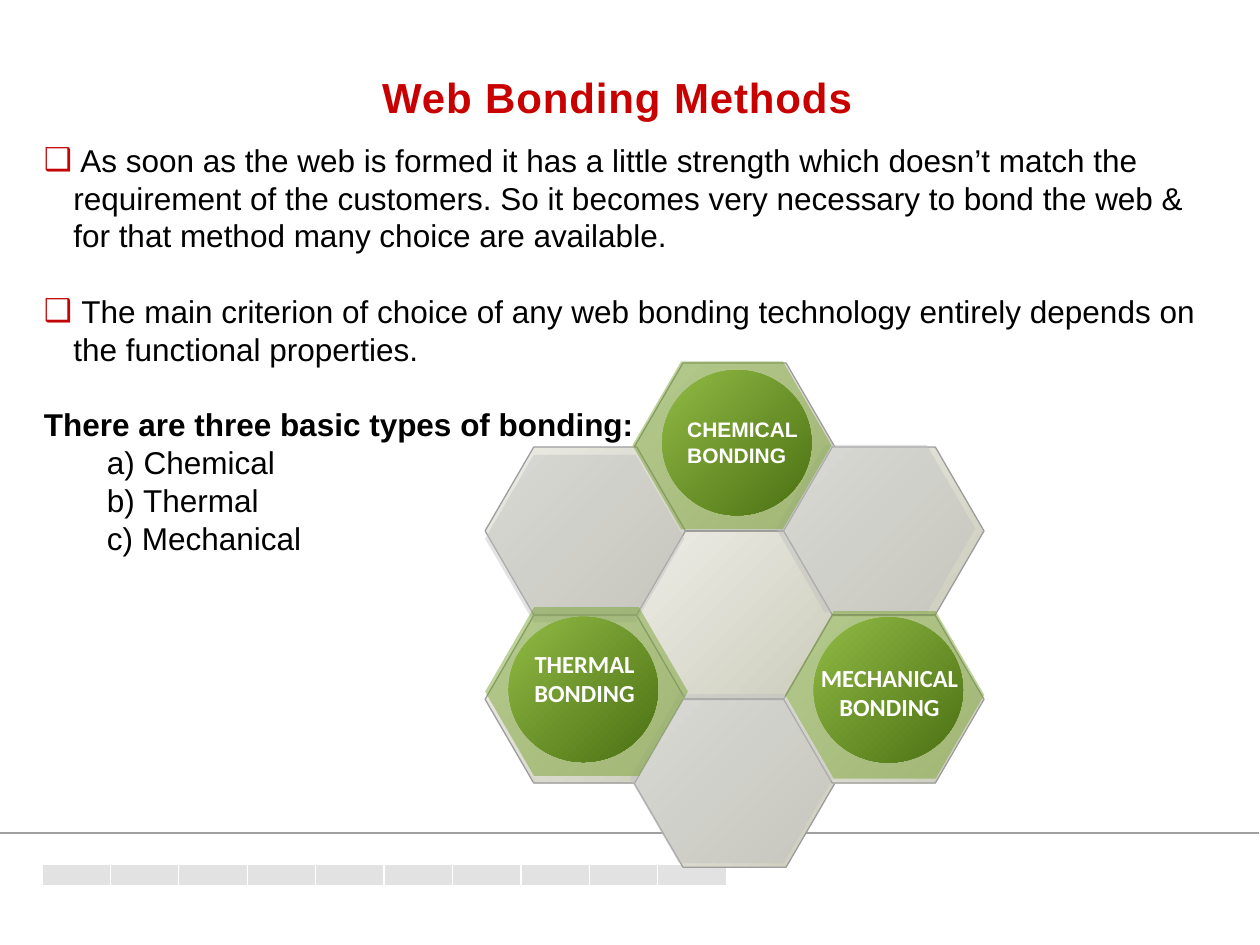
"""Build the web bonding methods slide with its honeycomb of bonding types."""
from dataclasses import dataclass
from typing import Optional

from lxml import etree
from pptx import Presentation
from pptx.dml.color import RGBColor
from pptx.enum.shapes import MSO_CONNECTOR, MSO_SHAPE
from pptx.enum.text import MSO_ANCHOR, PP_ALIGN
from pptx.oxml.ns import qn
from pptx.util import Pt

RECTANGLE, HEXAGON, OVAL = MSO_SHAPE.RECTANGLE, MSO_SHAPE.HEXAGON, MSO_SHAPE.OVAL
STRAIGHT = MSO_CONNECTOR.STRAIGHT
LEFT, CENTER = PP_ALIGN.LEFT, PP_ALIGN.CENTER
TOP, BOTTOM = MSO_ANCHOR.TOP, MSO_ANCHOR.BOTTOM

WHITE = RGBColor(0xFF, 0xFF, 0xFF)
BLACK = RGBColor(0x00, 0x00, 0x00)
TITLE_RED = RGBColor(0xC9, 0x00, 0x00)
BULLET_RED = RGBColor(0xC4, 0x05, 0x05)
BAR_GRAY = RGBColor(0xE2, 0xE2, 0xE2)
RULE_GRAY = RGBColor(0x9F, 0x9F, 0x9F)
CELL_EDGE = RGBColor(0x9D, 0x9D, 0x9D)
CELL_LIGHT = RGBColor(0xED, 0xED, 0xE7)
CELL_DARK = RGBColor(0xCC, 0xCC, 0xBC)
SILVER = RGBColor(0xC0, 0xC0, 0xC0)
GREEN = RGBColor(0x6B, 0x9B, 0x1A)
DISC_LIGHT = RGBColor(0x90, 0xBA, 0x45)
DISC_DARK = RGBColor(0x4C, 0x70, 0x13)


@dataclass(frozen=True)
class Area:
    left: float
    top: float
    width: float
    height: float

    def lengths(self) -> tuple:
        return tuple(Pt(n) for n in (self.left, self.top, self.width, self.height))


@dataclass(frozen=True)
class Style:
    font: str
    size: float
    color: RGBColor
    align: PP_ALIGN = LEFT
    anchor: MSO_ANCHOR = TOP
    inset: tuple = (7.2, 3.6)
    pitch: Optional[float] = None


@dataclass(frozen=True)
class Line:
    text: str
    bold: bool = True
    bullet: Optional[str] = None
    indent: float = 0
    before: float = 0
    tracking: int = 0


@dataclass(frozen=True)
class Overlay:
    area: Area
    color: RGBColor


@dataclass(frozen=True)
class Label:
    area: Area
    style: Style
    lines: tuple


TITLE_STYLE = Style("Arial", 24, TITLE_RED, CENTER, BOTTOM)
BODY_STYLE = Style("Arial", 18, BLACK, pitch=21.6)
CHEMICAL_STYLE = Style("Arial", 12, WHITE, pitch=14.8)
DISC_STYLE = Style("Calibri", 14, WHITE, CENTER, inset=(0, 0))

HANG = 16.8
BODY = (
    Line(" As soon as the web is formed it has a little strength which doesn’t match the "
         "requirement of the customers. So it becomes very necessary to bond the web & "
         "for that method many choice are available.", False, "❑", HANG),
    Line(" The main criterion of choice of any web bonding technology entirely depends on "
         "the functional properties.", False, "❑", HANG, BODY_STYLE.pitch),
    Line("There are three basic types of bonding:", before=BODY_STYLE.pitch),
    Line("a) Chemical", False, indent=36),
    Line("b) Thermal", False, indent=36),
    Line("c) Mechanical", False, indent=36),
)

CELLS = ((1, 0), (1, 2), (0, 1), (0, 3), (1, 4), (2, 1), (2, 3))
OVERLAYS = (
    Overlay(Area(277.2, 259.9, 113.8, 95.8), SILVER),
    Overlay(Area(360, 396.7, 115.9, 96.5), SILVER),
    Overlay(Area(443.5, 254.2, 113.8, 95.8), SILVER),
    Overlay(Area(277.2, 347, 115.9, 96.5), GREEN),
    Overlay(Area(361.4, 206.6, 113.8, 95.8), GREEN),
    Overlay(Area(448.6, 349.2, 113.8, 95.8), GREEN),
)
DISCS = ((378.4, 211.5), (465, 352.8), (290.7, 352.5))
LABELS = (
    Label(Area(463.7, 378.7, 89.3, 33.8), DISC_STYLE, (Line("MECHANICAL BONDING"),)),
    Label(Area(301.7, 370.8, 64.8, 31), DISC_STYLE, (Line("THERMAL BONDING"),)),
    Label(Area(385.6, 234, 100, 36), CHEMICAL_STYLE, (Line("CHEMICAL"), Line("BONDING"))),
)


def add_figure(page, kind: MSO_SHAPE, area: Area, colors: tuple,
               edge: Optional[RGBColor] = None, opacity: int = 100):
    """Draw a preset shape with one colour, or two for a diagonal gradient."""
    shape = page.shapes.add_shape(kind, *area.lengths())
    shape.shadow.inherit = False
    if kind == HEXAGON:
        shape.adjustments[0] = 0.29
    if len(colors) == 2:
        shape.fill.gradient()
        shape.fill.gradient_angle = 315
        for stop, color, position in zip(shape.fill.gradient_stops, colors, (0, 1)):
            stop.color.rgb = color
            stop.position = position
    else:
        shape.fill.solid()
        shape.fill.fore_color.rgb = colors[0]
    if opacity < 100:
        tint = shape.fill._xPr.find(qn("a:solidFill"))[0]
        etree.SubElement(tint, qn("a:alpha"), val=str(opacity * 1000))
    if edge is None:
        shape.line.fill.background()
    else:
        shape.line.color.rgb = edge
        shape.line.width = Pt(0.75)


def add_bullet(para, mark: str, color: RGBColor, indent: float) -> None:
    """Give a paragraph a coloured hanging bullet."""
    properties = para._p.get_or_add_pPr()
    properties.set("indent", str(-Pt(indent)))
    tint = etree.SubElement(properties, qn("a:buClr"))
    etree.SubElement(tint, qn("a:srgbClr"), val=str(color))
    etree.SubElement(properties, qn("a:buFont"), typeface="Arial")
    etree.SubElement(properties, qn("a:buChar"), char=mark)


def add_text(page, area: Area, style: Style, lines: tuple) -> None:
    """Place a wrapped text box, one paragraph for each line."""
    frame = page.shapes.add_textbox(*area.lengths()).text_frame
    frame.word_wrap = True
    frame.vertical_anchor = style.anchor
    frame.margin_left = frame.margin_right = Pt(style.inset[0])
    frame.margin_top = frame.margin_bottom = Pt(style.inset[1])
    for index, line in enumerate(lines):
        para = frame.add_paragraph() if index else frame.paragraphs[0]
        para.alignment = style.align
        if style.pitch:
            para.line_spacing = Pt(style.pitch)
        if line.before:
            para.space_before = Pt(line.before)
        if line.indent:
            para._p.get_or_add_pPr().set("marL", str(Pt(line.indent)))
        if line.bullet:
            add_bullet(para, line.bullet, BULLET_RED, line.indent)
        span = para.add_run()
        span.text = line.text
        span.font.name = style.font
        span.font.size = Pt(style.size)
        span.font.bold = line.bold
        span.font.color.rgb = style.color
        if line.tracking:
            span.font._element.set("spc", str(line.tracking))


def add_footer(page) -> None:
    """Draw the row of bars and the rule above it."""
    for index in range(10):
        add_figure(page, RECTANGLE, Area(24 + 39.1 * index, 493.9, 39.1, 12.2), (BAR_GRAY,), WHITE)
    rule = page.shapes.add_connector(STRAIGHT, Pt(0), Pt(476), Pt(719.5), Pt(476))
    rule.line.color.rgb = RULE_GRAY
    rule.line.width = Pt(0.75)
    etree.SubElement(rule._element.spPr, qn("a:effectLst"))


def add_honeycomb(page) -> None:
    """Draw the cells, their tinted overlays, the discs and the labels."""
    for column, row in CELLS:
        area = Area(277.2 + 85.3 * column, 207.4 + 48.1 * row, 114.5, 95.8)
        add_figure(page, HEXAGON, area, (CELL_LIGHT, CELL_DARK), CELL_EDGE)
    for overlay in OVERLAYS:
        add_figure(page, HEXAGON, overlay.area, (overlay.color,), opacity=44)
    for left, top in DISCS:
        add_figure(page, OVAL, Area(left, top, 85.3, 83), (DISC_LIGHT, DISC_DARK))
    for label in LABELS:
        add_text(page, label.area, label.style, label.lines)


def main() -> None:
    """Build and save the deck."""
    deck = Presentation()
    deck.slide_width, deck.slide_height = Pt(720), Pt(540)
    page = deck.slides.add_slide(deck.slide_layouts[6])
    add_footer(page)
    add_text(page, Area(37.4, 37, 630.7, 36), TITLE_STYLE,
             (Line("Web Bonding Methods", tracking=50),))
    add_text(page, Area(18, 77, 687.6, 290.9), BODY_STYLE, BODY)
    add_honeycomb(page)
    deck.save("out.pptx")


if __name__ == "__main__":
    main()
